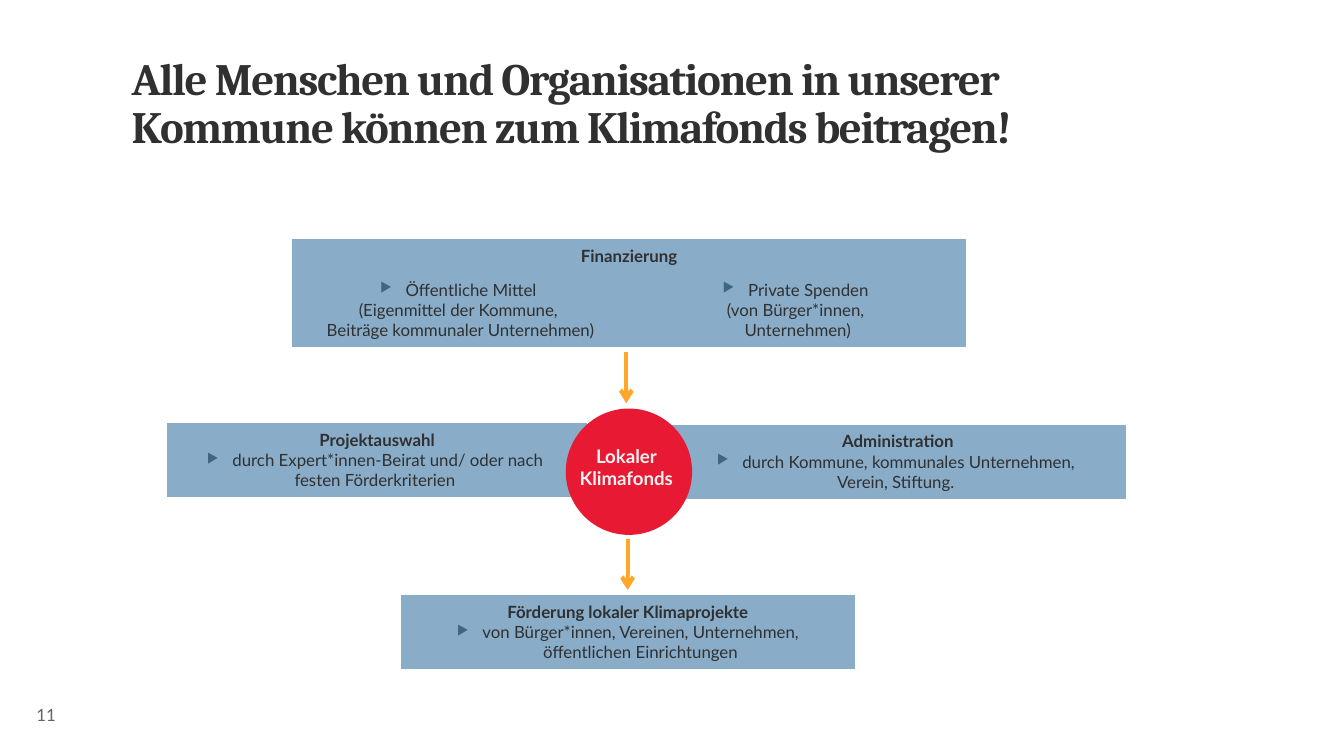
from dataclasses import dataclass

from lxml.etree import SubElement
from pptx import Presentation
from pptx.dml.color import RGBColor
from pptx.enum.shapes import MSO_CONNECTOR as Link, MSO_SHAPE as Shape
from pptx.enum.text import MSO_ANCHOR as Anchor, PP_ALIGN as Align
from pptx.oxml.ns import qn
from pptx.util import Inches, Pt

INK, BLUE, MARK = "303030", "89ADC9", "3E6685"
RED, PALE, GOLD, GREY = "E81A33", "F2F2F2", "FFA728", "636363"
PLAIN = "{2D5ABB26-0587-4C30-8999-92F81FD0307C}"  # no style, no grid


@dataclass
class Panel:
    left: float
    top: float
    width: float
    head: str
    lines: list[str]


@dataclass
class Arrow:
    x: float
    top: float
    end: float


def paint(color, tone: str) -> None:
    color.rgb = RGBColor.from_string(tone)


def style(para, size: float, tone: str, bold: bool = False, face: str = "Lato") -> None:
    font = para.font
    font.name, font.size, font.bold = face, Pt(size), bold
    paint(font.color, tone)


def add_mark(para) -> None:
    props = para._p.get_or_add_pPr()
    props.set("marL", str(Inches(0.19)))
    props.set("indent", str(Inches(-0.19)))
    # Bullet parts go before the default run properties
    color = props.makeelement(qn("a:buClr"), {})
    SubElement(color, qn("a:srgbClr"), val=MARK)
    size = props.makeelement(qn("a:buSzPct"), {"val": "80000"})
    char = props.makeelement(qn("a:buChar"), {"char": "▶"})
    for i, part in enumerate([color, size, char]):
        props.insert(i, part)


def fill_cell(cell, head: str, lines: list[str]) -> None:
    cell.fill.solid()
    paint(cell.fill.fore_color, BLUE)
    texts = [head] * bool(head) + lines
    frame = cell.text_frame
    frame.text = "\n".join(texts)
    for i, para in enumerate(frame.paragraphs):
        para.alignment = Align.CENTER
        is_head = bool(head) and i == 0
        style(para, 9, INK, bold=is_head)
        if i == bool(head) and lines:
            add_mark(para)


def add_grid(shapes, left: float, top: float, width: float, rows: list[float], cols: int):
    frame = shapes.add_table(len(rows), cols, Inches(left), Inches(top),
                             Inches(width), Inches(sum(rows)))
    grid = frame.table
    grid.first_row = grid.horz_banding = False
    grid._tbl.tblPr.find(qn("a:tableStyleId")).text = PLAIN
    for row, height in zip(grid.rows, rows):
        row.height = Inches(height)
    return grid


def add_panel(shapes, panel: Panel) -> None:
    grid = add_grid(shapes, panel.left, panel.top, panel.width, [0.55], 1)
    fill_cell(grid.cell(0, 0), panel.head, panel.lines)


def add_label(shapes, text: str, left: float, top: float, width: float, height: float):
    frame = shapes.add_textbox(Inches(left), Inches(top), Inches(width),
                               Inches(height)).text_frame
    frame.word_wrap = True
    frame.text = text
    return frame


def add_arrow(shapes, arrow: Arrow) -> None:
    x = Inches(arrow.x)
    link = shapes.add_connector(Link.STRAIGHT, x, Inches(arrow.top), x, Inches(arrow.end))
    link.line.width = Pt(2.25)
    paint(link.line.color, GOLD)
    SubElement(link.line._get_or_add_ln(), qn("a:tailEnd"), type="arrow")
    SubElement(link._element.spPr, qn("a:effectLst"))


SIDES = [
    Panel(4.98, 3.16, 3.4, "Administration",
          ["durch Kommune, kommunales Unternehmen, ", "Verein, Stiftung. "]),
    Panel(1.24, 3.15, 3.13, "Projektauswahl",
          ["durch Expert*innen-Beirat und/ oder nach ", "festen Förderkriterien "]),
]
GOAL = Panel(2.98, 4.43, 3.38, "Förderung lokaler Klimaprojekte",
             ["von Bürger*innen, Vereinen, Unternehmen, öffentlichen Einrichtungen"])
FUNDS = [
    ["Öffentliche Mittel ", "(Eigenmittel der Kommune, ", "Beiträge kommunaler Unternehmen)"],
    ["Private Spenden ", "(von Bürger*innen, ", "Unternehmen)"],
]
ARROWS = [Arrow(4.66, 2.62, 3), Arrow(4.67, 4.01, 4.39)]


def main() -> None:
    deck = Presentation()
    deck.slide_width = Inches(10)
    deck.slide_height = deck.slide_width * 9 // 16
    slide = deck.slides.add_slide(deck.slide_layouts[5])
    shapes = slide.shapes

    # Title
    title = shapes.title
    title.left, title.top = Inches(0.98), Inches(0.37)
    title.width, title.height = Inches(7.95), Inches(1.28)
    frame = title.text_frame
    frame.text = "Alle Menschen und Organisationen in unserer Kommune können zum Klimafonds beitragen!"
    frame.vertical_anchor = Anchor.TOP
    frame.margin_left = frame.margin_right = frame.margin_bottom = 0
    frame.margin_top = Inches(0.05)
    para = frame.paragraphs[0]
    para.alignment, para.line_spacing = Align.LEFT, 0.9
    style(para, 24, INK, bold=True, face="Cambria")
    para.runs[0]._r.get_or_add_rPr().set("spc", "-75")

    # Page number
    frame = add_label(shapes, "11", 0.27, 5.1, 0.55, 0.29)
    frame.vertical_anchor = Anchor.BOTTOM
    frame.margin_left = frame.margin_bottom = 0
    style(frame.paragraphs[0], 9, GREY)

    # Side panels, with the fund in front
    for side in SIDES:
        add_panel(shapes, side)
    disc = shapes.add_shape(Shape.OVAL, Inches(4.21), Inches(3.04), Inches(0.94), Inches(0.94))
    disc.shadow.inherit = False
    disc.fill.solid()
    paint(disc.fill.fore_color, RED)
    disc.line.fill.background()
    para = add_label(shapes, "Lokaler Klimafonds", 4.18, 3.26, 0.96, 0.44).paragraphs[0]
    para.alignment = Align.CENTER
    style(para, 10, PALE, bold=True)

    # Sources of money
    grid = add_grid(shapes, 2.17, 1.78, 5.02, [0.25, 0.55], 2)
    grid.cell(0, 0).merge(grid.cell(0, 1))
    fill_cell(grid.cell(0, 0), "Finanzierung", [])
    for col, lines in enumerate(FUNDS):
        fill_cell(grid.cell(1, col), "", lines)

    # Use of money and flow
    add_panel(shapes, GOAL)
    for arrow in ARROWS:
        add_arrow(shapes, arrow)

    deck.save("out.pptx")


if __name__ == "__main__":
    main()
